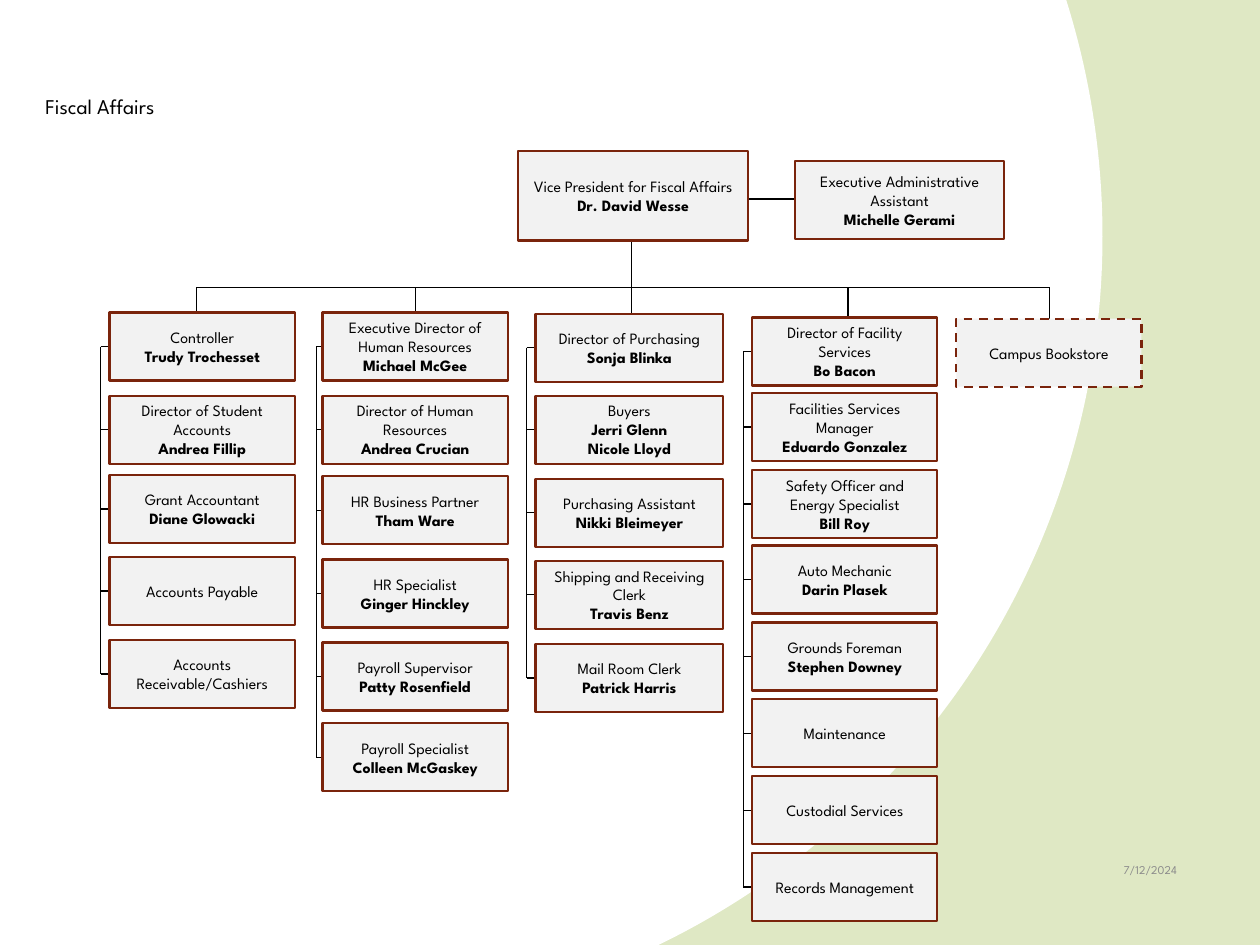
from lxml import etree
from pptx import Presentation
from pptx.dml.color import RGBColor
from pptx.enum.dml import MSO_LINE
from pptx.enum.shapes import MSO_CONNECTOR, MSO_SHAPE
from pptx.enum.text import MSO_ANCHOR, MSO_AUTO_SIZE, PP_ALIGN
from pptx.oxml.ns import qn
from pptx.util import Inches, Pt

BLACK = RGBColor(0x00, 0x00, 0x00)
GRAY = RGBColor(0x8C, 0x8C, 0x8C)
BOX_FILL = RGBColor(0xF2, 0xF2, 0xF2)
RUST = RGBColor(0x7A, 0x24, 0x0C)
WHITE = RGBColor(0xFF, 0xFF, 0xFF)
GREEN = RGBColor(0xDF, 0xE8, 0xC4)

FONT = "League Spartan"
STRAIGHT = MSO_CONNECTOR.STRAIGHT
RECT = MSO_SHAPE.RECTANGLE
DASH = MSO_LINE.DASH
LEFT, CENTER, RIGHT = PP_ALIGN.LEFT, PP_ALIGN.CENTER, PP_ALIGN.RIGHT
TOP, MIDDLE = MSO_ANCHOR.TOP, MSO_ANCHOR.MIDDLE

BOX_W, BOX_H = 1.47, 0.54
TICK_W = 0.4
BUS_Y, DROP_END = 2.28, 2.9
BUS_XS = (1.56, 3.3, 6.73, 8.33)
TRUNK_X = 5.01

# Each column: left, box width, rail x, and rows of (top, role, names...)
COLUMNS = [
    (0.87, BOX_W, 0.8, [
        (2.48, "Controller", "Trudy Trochesset"),
        (3.14, "Director of Student Accounts", "Andrea Fillip"),
        (3.77, "Grant Accountant", "Diane Glowacki"),
        (4.42, "Accounts Payable"),
        (5.08, "Accounts Receivable/Cashiers"),
    ]),
    (2.56, BOX_W, 2.51, [
        (2.48, "Executive Director of Human Resources", "Michael McGee"),
        (3.14, "Director of Human Resources", "Andrea Crucian"),
        (3.78, "HR Business Partner", "Tham Ware"),
        (4.44, "HR Specialist", "Ginger Hinckley"),
        (5.1, "Payroll Supervisor", "Patty Rosenfield"),
        (5.74, "Payroll Specialist", "Colleen McGaskey"),
    ]),
    (4.25, 1.49, 4.18, [
        (2.49, "Director of Purchasing", "Sonja Blinka"),
        (3.14, "Buyers", "Jerri Glenn", "Nicole Lloyd"),
        (3.8, "Purchasing Assistant", "Nikki Bleimeyer"),
        (4.45, "Shipping and Receiving Clerk", "Travis Benz"),
        (5.11, "Mail Room Clerk", "Patrick Harris"),
    ]),
    (5.97, BOX_W, 5.9, [
        (2.52, "Director of Facility Services", "Bo Bacon"),
        (3.12, "Facilities Services Manager", "Eduardo Gonzalez"),
        (3.73, "Safety Officer and Energy Specialist", "Bill Roy"),
        (4.33, "Auto Mechanic", "Darin Plasek"),
        (4.94, "Grounds Foreman", "Stephen Downey"),
        (5.55, "Maintenance"),
        (6.16, "Custodial Services"),
        (6.77, "Records Management"),
    ]),
]


def set_background(s):
    """Hard-edged radial gradient: white disc centred at a quarter of the slide."""
    fill = s.background.fill
    fill.gradient()
    for stop, color in zip(fill.gradient_stops, (WHITE, GREEN)):
        stop.color.rgb = color
        stop.position = 1.0
    grad = s.element.find(".//" + qn("a:gradFill"))
    lin = grad.find(qn("a:lin"))
    circle = etree.Element(qn("a:path"), {"path": "circle"})
    etree.SubElement(circle, qn("a:fillToRect"),
                     dict(l="50000", t="50000", r="100000", b="100000"))
    grad.replace(lin, circle)


def add_run(p, text, size, color=BLACK, bold=False):
    r = p.add_run()
    r.text = text
    r.font.name = FONT
    r.font.size = Pt(size)
    r.font.bold = bold
    r.font.color.rgb = color


def place(sp, left, top, width, height):
    sp.left, sp.top, sp.width, sp.height = map(Inches, (left, top, width, height))


def fill_label(sp, text, size, color, align, anchor, wrap):
    tf = sp.text_frame
    tf.auto_size = MSO_AUTO_SIZE.NONE
    tf.word_wrap = wrap
    tf.vertical_anchor = anchor
    p = tf.paragraphs[0]
    p.alignment = align
    add_run(p, text, size, color)


def add_box(s, left, top, width, height, lines, dash=None):
    """Position box: the first line is the role, the rest are bold names."""
    sp = s.shapes.add_shape(RECT, *map(Inches, (left, top, width, height)))
    sp.shadow.inherit = False
    sp.fill.solid()
    sp.fill.fore_color.rgb = BOX_FILL
    sp.line.color.rgb = RUST
    sp.line.width = Pt(1.25)
    if dash:
        sp.line.dash_style = dash
    tf = sp.text_frame
    tf.word_wrap = True
    tf.vertical_anchor = MIDDLE
    for i, text in enumerate(lines):
        p = tf.add_paragraph() if i else tf.paragraphs[0]
        p.alignment = CENTER
        add_run(p, text, 9, bold=i > 0)


def add_line(s, x1, y1, x2, y2):
    line = s.shapes.add_connector(STRAIGHT, *map(Inches, (x1, y1, x2, y2)))
    line.line.color.rgb = BLACK
    line.line.width = Pt(0.75)
    etree.SubElement(line._element.spPr, qn("a:effectLst"))


def add_bus(s):
    """Trunk, horizontal bus and drops; their ends run under the boxes."""
    add_line(s, TRUNK_X, 1.86, TRUNK_X, 2.66)
    add_line(s, BUS_XS[0], BUS_Y, BUS_XS[-1], BUS_Y)
    for x in BUS_XS:
        add_line(s, x, DROP_END, x, BUS_Y)


def add_column(s, left, width, rail, rows):
    """Stack of boxes tied to a rail on their left by ticks that run under them."""
    mids = [top + BOX_H / 2 for top, *_ in rows]
    add_line(s, rail, mids[0], rail, mids[-1])
    for y in mids:
        add_line(s, rail, y, rail + TICK_W, y)
    for top, *lines in rows:
        add_box(s, left, top, width, BOX_H, lines)


def main():
    prs = Presentation()
    prs.slide_width, prs.slide_height = Inches(10), Inches(7.5)
    s = prs.slides.add_slide(prs.slide_layouts[5])
    set_background(s)

    title = s.shapes.title
    place(title, 0.26, 0.69, 1.18, 0.3)
    fill_label(title, "Fiscal Affairs", 12, BLACK, LEFT, TOP, False)

    add_bus(s)
    add_line(s, 5.83, 1.58, 6.41, 1.58)
    add_box(s, 4.11, 1.2, 1.83, 0.71,
            ("Vice President for Fiscal Affairs", "Dr. David Wesse"))
    add_box(s, 6.31, 1.28, 1.66, 0.62,
            ("Executive Administrative Assistant", "Michelle Gerami"))
    for column in COLUMNS:
        add_column(s, *column)
    add_box(s, 7.59, 2.53, BOX_W, BOX_H, ("Campus Bookstore",), DASH)

    date = s.shapes.add_textbox(*map(Inches, (8.5, 6.7, 0.94, 0.41)))
    fill_label(date, "7/12/2024", 6.8, GRAY, RIGHT, MIDDLE, True)

    prs.save("out.pptx")


if __name__ == "__main__":
    main()
